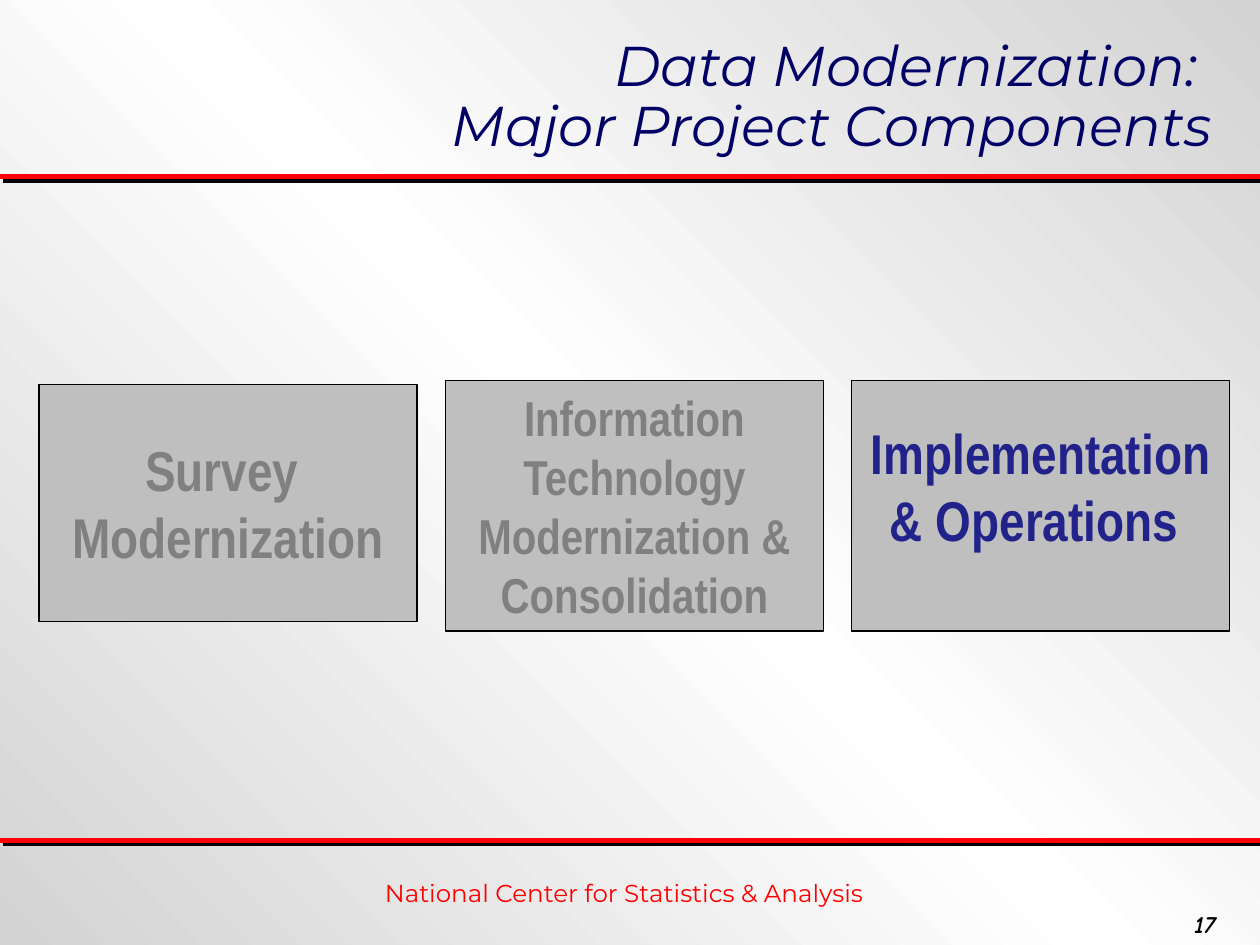
"""Build the slide of major data modernization project components."""
from copy import deepcopy
from lxml import etree
from pptx import Presentation
from pptx.dml.color import RGBColor
from pptx.enum import shapes, text
from pptx.oxml.ns import qn
from pptx.util import Cm, Pt

TITLE = "Data Modernization: \vMajor Project Components"
FOOTER = "National Center for Statistics & Analysis"
NUMBER = "17"
RULES = [3.56, 16.94]
PARTS = [
    dict(lines=["Survey ", "Modernization"], top=7.75, high=4.78,
         size=32, ink="dim", foot=0.13),
    dict(lines=["Information Technology Modernization & Consolidation"],
         top=7.67, high=5.05, size=28, ink="dim", foot=0.13),
    dict(lines=["Implementation & Operations "], top=7.67, high=5.05,
         size=32, ink="lit", foot=0.94),
]
LEFT, WIDE, STEP = 0.79, 7.62, 8.19
THEME = dict(
    back=["D3D3D3", "FFFFFF", "D3D3D3"], rule="FF0000", shade="000000",
    box="BFBFBF", dim="808080", lit="22228B", title="000066", black="000000",
    head="Montserrat", body="Arial Narrow", page="Comic Neue",
    big=32, small=14,
)
ALIGN = text.PP_ALIGN


def tint(key):
    return RGBColor.from_string(THEME[key])


def write(frame, lines, face, size, ink, align, bold=False, slant=False):
    frame.word_wrap = True
    frame.text = "\n".join(lines)
    for para in frame.paragraphs:
        para.alignment = align
        font = para.font
        font.name, font.size = THEME[face], Pt(size)
        font.bold, font.italic = bold, slant
        font.color.rgb = tint(ink)


def paint(slide):
    fill = slide.background.fill
    fill.gradient()
    fill.gradient_angle = 45
    stops = slide.element.find(".//" + qn("a:gsLst"))
    stops.append(deepcopy(stops[-1]))
    for i, (stop, code) in enumerate(zip(fill.gradient_stops, THEME["back"])):
        stop.position = i / 2
        stop.color.rgb = RGBColor.from_string(code)


def rule(slide, y, wide):
    line = slide.shapes.add_connector(
        shapes.MSO_CONNECTOR.STRAIGHT, 0, Cm(y), wide, Cm(y))
    line.line.color.rgb = tint("rule")
    line.line.width = Pt(3)
    props = line._element.spPr
    effect = etree.SubElement(props, qn("a:effectLst"))
    shade = etree.SubElement(effect, qn("a:outerShdw"), dist=str(Pt(2.8)),
                             dir="2700000", algn="ctr", rotWithShape="0")
    etree.SubElement(shade, qn("a:srgbClr"), val=THEME["shade"])


def label(slide, words, place, face, ink, align, **style):
    box = slide.shapes.add_textbox(*map(Cm, place))
    write(box.text_frame, [words], face, THEME["small"], ink, align, **style)


def block(slide, i, part):
    box = slide.shapes.add_shape(
        shapes.MSO_SHAPE.RECTANGLE, Cm(LEFT + i * STEP), Cm(part["top"]),
        Cm(WIDE), Cm(part["high"]))
    box.shadow.inherit = False
    box.fill.solid()
    box.fill.fore_color.rgb = tint("box")
    box.line.color.rgb = tint("black")
    box.line.width = Pt(0.75)
    frame = box.text_frame
    frame.vertical_anchor = text.MSO_ANCHOR.MIDDLE
    frame.margin_bottom = Cm(part["foot"])
    write(frame, part["lines"], "body", part["size"], part["ink"],
          ALIGN.CENTER, bold=True)


def main():
    deck = Presentation()
    deck.slide_width, deck.slide_height = Cm(25.4), Cm(19.05)
    slide = deck.slides.add_slide(deck.slide_layouts[5])
    paint(slide)
    for y in RULES:
        rule(slide, y, deck.slide_width)
    label(slide, FOOTER, (1.47, 17.58, 22.23, 0.84), "head", "rule",
          ALIGN.CENTER)
    label(slide, NUMBER, (23.83, 18.21, 2.44, 0.84), "page", "black",
          ALIGN.LEFT, bold=True, slant=True)
    title = slide.shapes.title
    title.left, title.top = Cm(0.89), Cm(0.64)
    title.width, title.height = Cm(23.8), Cm(2.69)
    frame = title.text_frame
    frame.vertical_anchor = text.MSO_ANCHOR.MIDDLE
    write(frame, [TITLE], "head", THEME["big"], "title", ALIGN.RIGHT,
          slant=True)
    frame.auto_size = text.MSO_AUTO_SIZE.NONE
    frame.paragraphs[0].line_spacing = 0.9
    for i, part in enumerate(PARTS):
        block(slide, i, part)
    deck.save("out.pptx")


if __name__ == "__main__":
    main()
